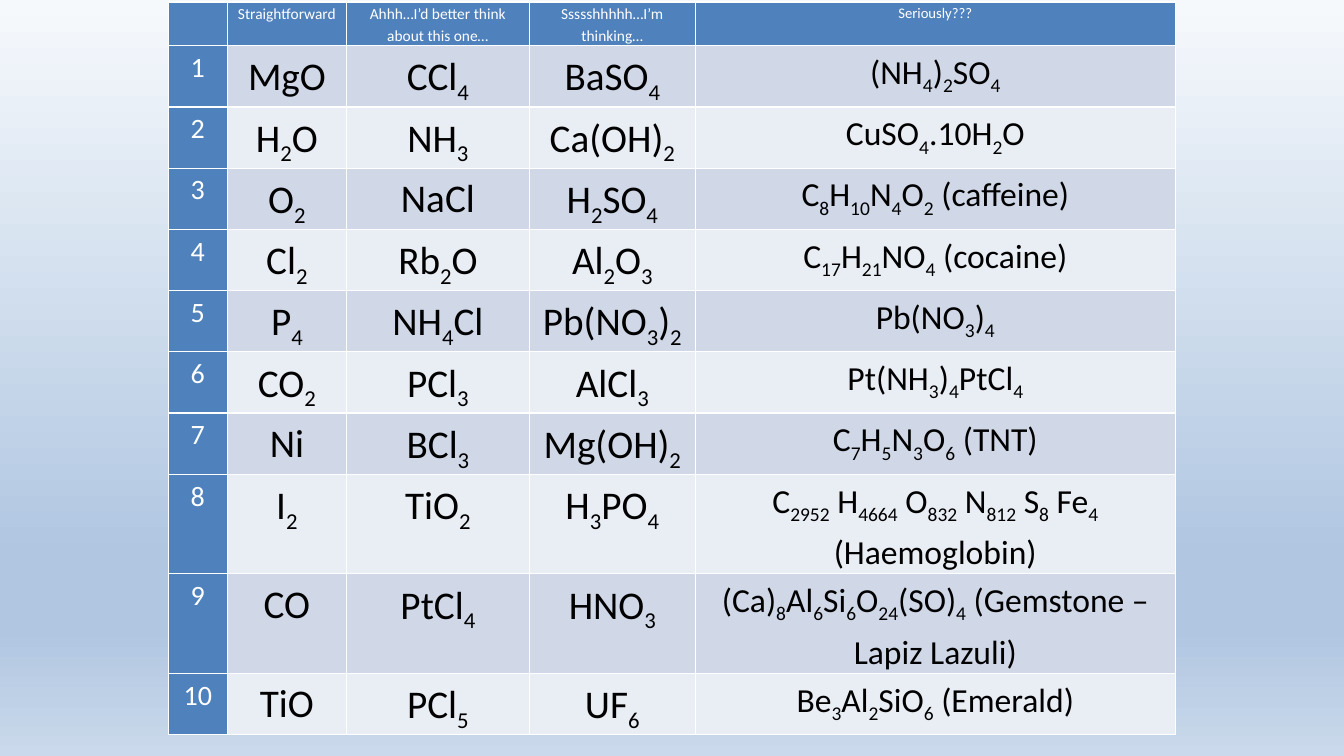
from lxml.etree import SubElement
from pptx import Presentation
from pptx.dml.color import RGBColor
from pptx.enum.text import PP_ALIGN
from pptx.oxml.ns import qn
from pptx.util import Cm, Pt

HEADS = ["", "Straightforward", "Ahhh…I’d better think about this one…",
         "Ssssshhhhh…I’m thinking…", "Seriously???"]
ROWS = [
    ("MgO", "CCl_4_", "BaSO_4_", "(NH_4_)_2_SO_4_"),
    ("H_2_O", "NH_3_", "Ca(OH)_2_", "CuSO_4_.10H_2_O"),
    ("O_2_", "NaCl", "H_2_SO_4_", "C_8_H_10_N_4_O_2_ (caffeine)"),
    ("Cl_2_", "Rb_2_O", "Al_2_O_3_", "C_17_H_21_NO_4_ (cocaine)"),
    ("P_4_", "NH_4_Cl", "Pb(NO_3_)_2_", "Pb(NO_3_)_4_"),
    ("CO_2_", "PCl_3_", "AlCl_3_", "Pt(NH_3_)_4_PtCl_4_"),
    ("Ni", "BCl_3_", "Mg(OH)_2_", "C_7_H_5_N_3_O_6_ (TNT)"),
    ("I_2_", "TiO_2_", "H_3_PO_4_",
     "C_2952_ H_4664_ O_832_ N_812_ S_8_ Fe_4_ (Haemoglobin)"),
    ("CO", "PtCl_4_", "HNO_3_",
     "(Ca)_8_Al_6_Si_6_O_24_(SO)_4_ (Gemstone – Lapiz Lazuli)"),
    ("TiO", "PCl_5_", "UF_6_", "Be_3_Al_2_SiO_6_ (Emerald)"),
]
WIDTHS = [1.49, 3, 4.61, 4.18, 12.1]
HEIGHTS = [1.09] + [1.54] * 7 + [2.5] * 2 + [1.54]
HEAD_SIZES = [11, 11, 11, 11, 10.5]
BODY_SIZES = [20, 28, 28, 28, 24]
BANDS = ["E9EDF4", "D0D8E8"]
BLUE, WHITE, BLACK = "4F81BD", "FFFFFF", "000000"
STOPS = [(0, "F6F9FC"), (74, "B0C6E1"), (83, "B0C6E1"), (100, "CAD9EB")]


def color(code):
    return RGBColor.from_string(code)


def paint_back(slide):
    fill = slide.background.fill
    fill.gradient()
    fill.gradient_angle = 270
    stops = slide._element.xpath(".//a:gsLst")[0]
    for old in list(stops):
        stops.remove(old)
    for place, code in STOPS:
        stop = SubElement(stops, qn("a:gs"), pos=str(place * 1000))
        SubElement(stop, qn("a:srgbClr"), val=code)


def add_edges(cell):
    props = cell._tc.get_or_add_tcPr()
    for spot, side in enumerate(["a:lnL", "a:lnR", "a:lnT", "a:lnB"]):
        line = props.makeelement(qn(side), {"w": str(Pt(1))})
        props.insert(spot, line)
        fill = SubElement(line, qn("a:solidFill"))
        SubElement(fill, qn("a:srgbClr"), val=WHITE)


def fill_cell(cell, text, size, ink, back):
    cell.fill.solid()
    cell.fill.fore_color.rgb = color(back)
    add_edges(cell)
    cell.margin_left = cell.margin_right = Cm(0.1)
    cell.margin_top = cell.margin_bottom = 0
    para = cell.text_frame.paragraphs[0]
    para.alignment = PP_ALIGN.CENTER
    para.line_spacing = 1.15
    for index, part in enumerate(text.split("_")):
        if not part:
            continue
        run = para.add_run()
        run.text = part
        font = run.font
        font.name, font.size, font.bold = "Calibri", Pt(size), False
        font.color.rgb = color(ink)
        if index % 2:
            run._r.get_or_add_rPr().set("baseline", "-25000")


def main():
    deck = Presentation()
    deck.slide_width, deck.slide_height = Cm(33.87), Cm(19.05)
    slide = deck.slides.add_slide(deck.slide_layouts[6])
    paint_back(slide)

    grid = [HEADS] + [(str(n), *row) for n, row in enumerate(ROWS, 1)]
    table = slide.shapes.add_table(
        len(grid), len(HEADS), Cm(4.24), Cm(0.05),
        Cm(sum(WIDTHS)), Cm(sum(HEIGHTS))).table
    for col, width in zip(table.columns, WIDTHS):
        col.width = Cm(width)
    for row, height in zip(table.rows, HEIGHTS):
        row.height = Cm(height)

    for r, row in enumerate(grid):
        sizes = BODY_SIZES if r else HEAD_SIZES
        for c, text in enumerate(row):
            inner = r and c
            fill_cell(table.cell(r, c), text, sizes[c],
                      BLACK if inner else WHITE,
                      BANDS[r % 2] if inner else BLUE)

    deck.save("out.pptx")


if __name__ == "__main__":
    main()
